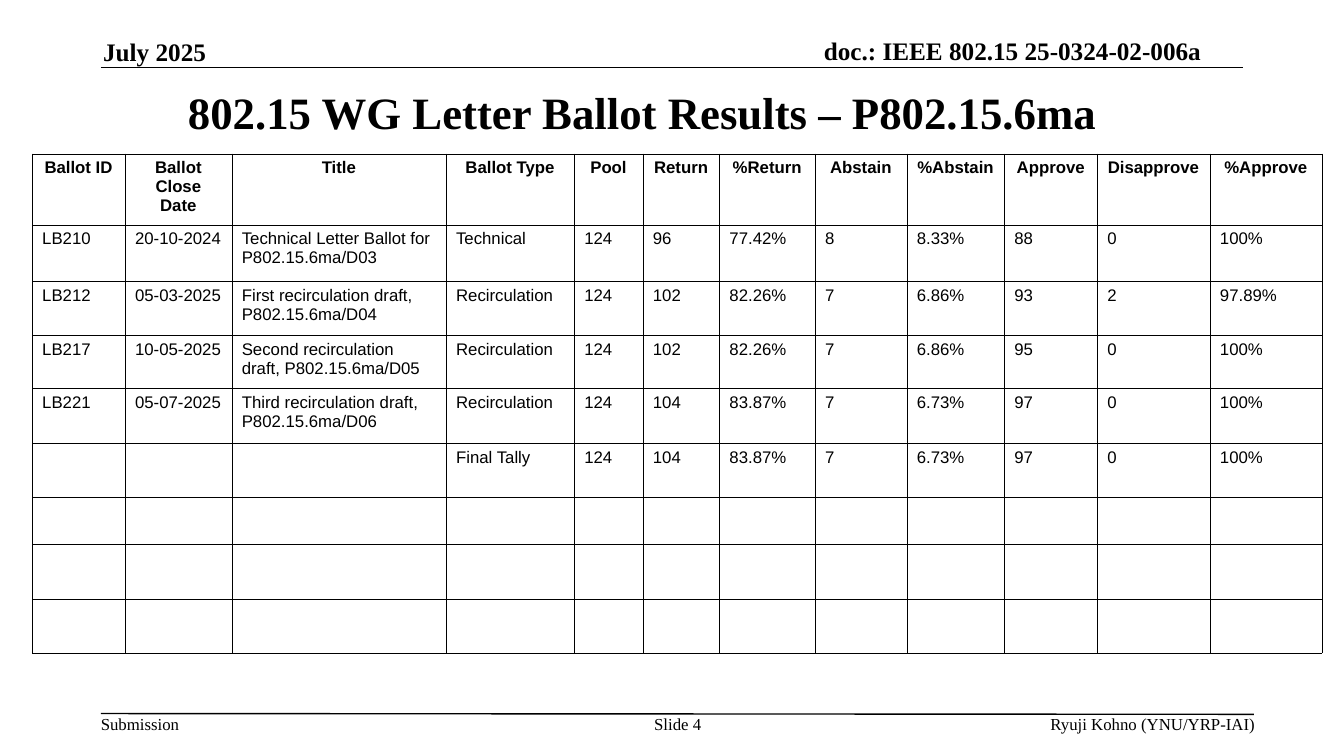
from lxml import etree
from pptx import Presentation
from pptx.enum import shapes, text
from pptx.oxml import ns
from pptx import util as u
from pptx.dml.color import RGBColor

HUES = {"ink": "000000", "paper": "FFFFFF"}
SERIF, SANS = "Times New Roman", "Arial"
LEFT, MID, RIGHT = text.PP_ALIGN.LEFT, text.PP_ALIGN.CENTER, text.PP_ALIGN.RIGHT
TOP, LOW = text.MSO_ANCHOR.TOP, text.MSO_ANCHOR.BOTTOM

COLS = [2.34, 2.69, 5.4, 3.23, 1.73, 1.93, 2.41, 2.31, 2.46, 2.34, 2.84, 2.82]
ROWS = [1.79, 1.42, 1.37, 1.34, 1.37, 1.37, 1.19, 1.37, 1.37]
BALLOTS = [
    ["Ballot ID", "Ballot Close Date", "Title", "Ballot Type", "Pool", "Return",
     "%Return", "Abstain", "%Abstain", "Approve", "Disapprove", "%Approve"],
    ["LB210", "20-10-2024", "Technical Letter Ballot for P802.15.6ma/D03", "Technical",
     "124", "96", "77.42%", "8", "8.33%", "88", "0", "100%"],
    ["LB212", "05-03-2025", "First recirculation draft, P802.15.6ma/D04", "Recirculation",
     "124", "102", "82.26%", "7", "6.86%", "93", "2", "97.89%"],
    ["LB217", "10-05-2025", "Second recirculation draft, P802.15.6ma/D05", "Recirculation",
     "124", "102", "82.26%", "7", "6.86%", "95", "0", "100%"],
    ["LB221", "05-07-2025", "Third recirculation draft, P802.15.6ma/D06", "Recirculation",
     "124", "104", "83.87%", "7", "6.73%", "97", "0", "100%"],
    ["", "", "", "Final Tally",
     "124", "104", "83.87%", "7", "6.73%", "97", "0", "100%"],
]


def write(frame, words, size=12, font=SERIF, bold=False, align=LEFT, hue="ink"):
    para = frame.paragraphs[0]
    para.alignment = align
    run = para.add_run()
    run.text = words
    run.font.size = u.Pt(size)
    run.font.name = font
    run.font.bold = bold
    run.font.color.rgb = RGBColor.from_string(HUES[hue])


class Page:
    def __init__(self, deck):
        self.slide = deck.slides.add_slide(deck.slide_layouts[5])
        self.shapes = self.slide.shapes

    def title(self, words, x, y, w, h):
        head = self.shapes.title
        head.left, head.top, head.width, head.height = map(u.Cm, (x, y, w, h))
        frame = head.text_frame
        frame.auto_size = text.MSO_AUTO_SIZE.NONE
        frame.vertical_anchor = text.MSO_ANCHOR.MIDDLE
        write(frame, words, size=32, bold=True, align=MID)

    def label(self, words, x, y, w, h, anchor=TOP, wrap=True, **style):
        frame = self.shapes.add_textbox(*map(u.Cm, (x, y, w, h))).text_frame
        frame.margin_left = frame.margin_right = 0
        frame.margin_top = frame.margin_bottom = 0
        frame.word_wrap = wrap
        frame.vertical_anchor = anchor
        write(frame, words, **style)

    def rule(self, x1, y1, x2, y2):
        line = self.shapes.add_connector(
            shapes.MSO_CONNECTOR.STRAIGHT, *map(u.Cm, (x1, y1, x2, y2)))
        line.line.color.rgb = RGBColor.from_string(HUES["ink"])
        line.line.width = u.Pt(1)
        etree.SubElement(line._element.spPr, ns.qn("a:effectLst"))

    def border(self, cell):
        props = cell._tc.get_or_add_tcPr()
        for spot, side in enumerate(("lnL", "lnR", "lnT", "lnB")):
            edge = etree.Element(ns.qn("a:" + side), w=str(u.Pt(0.06)))
            fill = etree.SubElement(edge, ns.qn("a:solidFill"))
            etree.SubElement(fill, ns.qn("a:srgbClr"), val=HUES["ink"])
            props.insert(spot, edge)

    def table(self, data, x, y, cols, rows):
        grid = self.shapes.add_table(
            len(rows), len(cols), *map(u.Cm, (x, y, sum(cols), sum(rows)))).table
        grid.first_row = grid.horz_banding = False
        for col, wide in zip(grid.columns, cols):
            col.width = u.Cm(wide)
        for row, tall in zip(grid.rows, rows):
            row.height = u.Cm(tall)
        for cell in grid.iter_cells():
            cell.fill.solid()
            cell.fill.fore_color.rgb = RGBColor.from_string(HUES["paper"])
            self.border(cell)
        for r, line in enumerate(data):
            for c, words in enumerate(line):
                if words:
                    write(grid.cell(r, c).text_frame, words, font=SANS,
                          bold=r == 0, align=LEFT if r else MID)


def main():
    deck = Presentation()
    deck.slide_width, deck.slide_height = u.Cm(33.87), u.Cm(19.05)
    page = Page(deck)
    page.rule(2.54, 1.7, 31.32, 1.7)
    page.rule(2.54, 17.98, 31.6, 18)
    page.label("July 2025", 2.6, 0.92, 6.93, 0.76, anchor=LOW, size=18, bold=True)
    page.label("doc.: IEEE 802.15 25-0324-02-006a", 17.07, 0.88, 13.2, 0.76,
               anchor=LOW, size=18, bold=True, align=RIGHT)
    page.title("802.15 WG Letter Ballot Results – P802.15.6ma", 1.8, 2, 28.78, 1.63)
    page.table(BALLOTS, 0.81, 3.87, COLS, ROWS)
    page.label("Submission", 2.54, 17.98, 1.98, 0.51, wrap=False)
    page.label("Slide 4", 16.1, 17.98, 1.96, 1.02, align=MID)
    page.label("Ryuji Kohno (YNU/YRP-IAI)", 19.84, 17.98, 11.79, 0.51, align=RIGHT)
    deck.save("out.pptx")


if __name__ == "__main__":
    main()
